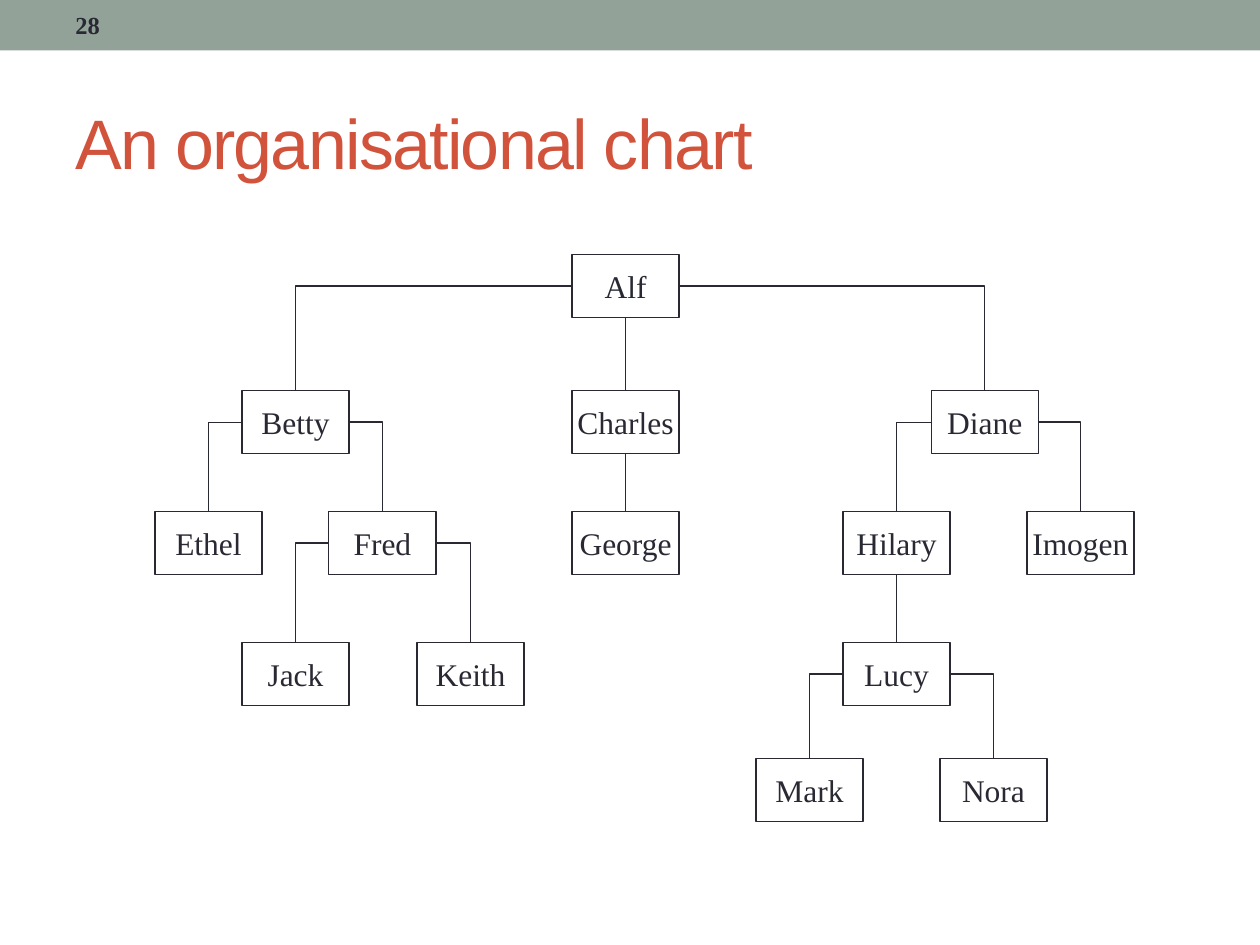
"""Build a slide with an organisational chart."""
from lxml.etree import SubElement
from pptx import Presentation
from pptx.dml.color import RGBColor as Color
from pptx.enum.shapes import MSO_CONNECTOR as Link, MSO_SHAPE as Shape
from pptx.enum.text import MSO_ANCHOR as Anchor, PP_ALIGN as Align
from pptx.oxml.ns import qn
from pptx.util import Inches, Pt

COLORS = {"band": "93A299", "title": "D2533C", "ink": "292934"}
SERIF = "Times New Roman"
COLUMNS = [1.23, 1.92, 2.61, 3.31, 4.54, 6, 6.69, 7.39, 7.46, 8.15]
ROWS = [2.02, 3.1, 4.06, 5.1, 6.02]
BOX_SIZE = (0.85, 0.5)
TOP, LEFT, BOTTOM, RIGHT = range(4)
PEOPLE = {
    "Alf": (4, 0, None),
    "Betty": (1, 1, "Alf"),
    "Charles": (4, 1, "Alf"),
    "Diane": (7, 1, "Alf"),
    "Ethel": (0, 2, "Betty"),
    "Fred": (2, 2, "Betty"),
    "George": (4, 2, "Charles"),
    "Hilary": (6, 2, "Diane"),
    "Imogen": (9, 2, "Diane"),
    "Jack": (1, 3, "Fred"),
    "Keith": (3, 3, "Fred"),
    "Lucy": (6, 3, "Hilary"),
    "Mark": (5, 4, "Lucy"),
    "Nora": (8, 4, "Lucy"),
}


def color(name):
    """Return the named colour."""
    return Color.from_string(COLORS[name])


def write(shape, text, size=18, font=SERIF, ink="ink", bold=False,
          align=Align.LEFT, wrap=True, spacing=None):
    """Put formatted, vertically centred text in a shape."""
    frame = shape.text_frame
    frame.word_wrap = wrap
    frame.vertical_anchor = Anchor.MIDDLE
    para = frame.paragraphs[0]
    para.alignment = align
    span = para.add_run()
    span.text = text
    span.font.size = Pt(size)
    span.font.name = font
    span.font.bold = bold
    span.font.color.rgb = color(ink)
    if spacing is not None:
        span.font._element.set("spc", str(spacing * 100))


def add_label(page, text, area, **style):
    """Add a text box with the given area and text format."""
    box = page.shapes.add_textbox(*map(Inches, area))
    write(box, text, **style)


def add_band(page, width):
    """Add the coloured band along the top of the page."""
    band = page.shapes.add_shape(Shape.RECTANGLE, 0, 0, width, Inches(0.4))
    band.shadow.inherit = False
    band.fill.solid()
    band.fill.fore_color.rgb = color("band")
    band.line.fill.background()


def add_person(page, name, column, row):
    """Add the outlined box of one person on the chart grid."""
    area = (COLUMNS[column], ROWS[row], *BOX_SIZE)
    box = page.shapes.add_shape(Shape.RECTANGLE, *map(Inches, area))
    box.shadow.inherit = False
    box.fill.background()
    box.line.color.rgb = color("ink")
    box.line.width = Pt(0.75)
    write(box, name, align=Align.CENTER, wrap=False)
    return box


def add_link(page, boss, report):
    """Connect a boss to a report, bending once unless they share a column."""
    straight = boss.left == report.left
    kind = Link.STRAIGHT if straight else Link.ELBOW
    link = page.shapes.add_connector(kind, 0, 0, 0, 0)
    leftward = report.left < boss.left
    side = BOTTOM if straight else LEFT if leftward else RIGHT
    link.begin_connect(boss, side)
    link.end_connect(report, TOP)
    link.line.color.rgb = color("ink")
    link.line.width = Pt(0.75)
    props = link._element.spPr
    SubElement(props, qn("a:effectLst"))
    if not straight:
        props.find(qn("a:prstGeom")).set("prst", "bentConnector2")
    if leftward:
        frame = props.find(qn("a:xfrm"))
        frame.flipH, frame.flipV, frame.rot = False, True, 180


def main():
    """Build and save the deck."""
    deck = Presentation()
    deck.slide_width, deck.slide_height = Inches(10), Inches(7.5)
    page = deck.slides.add_slide(deck.slide_layouts[6])
    add_band(page, deck.slide_width)
    add_label(page, "An organisational chart", (0.5, 0.58, 9, 1.08),
              size=40, font="Arial", ink="title", spacing=-1)
    add_label(page, "28", (0.5, 0.02, 3.17, 0.36), size=14, bold=True)
    boxes = {name: add_person(page, name, column, row)
             for name, (column, row, _) in PEOPLE.items()}
    for name, (_, _, boss) in PEOPLE.items():
        if boss:
            add_link(page, boxes[boss], boxes[name])
    deck.save("out.pptx")


if __name__ == "__main__":
    main()
